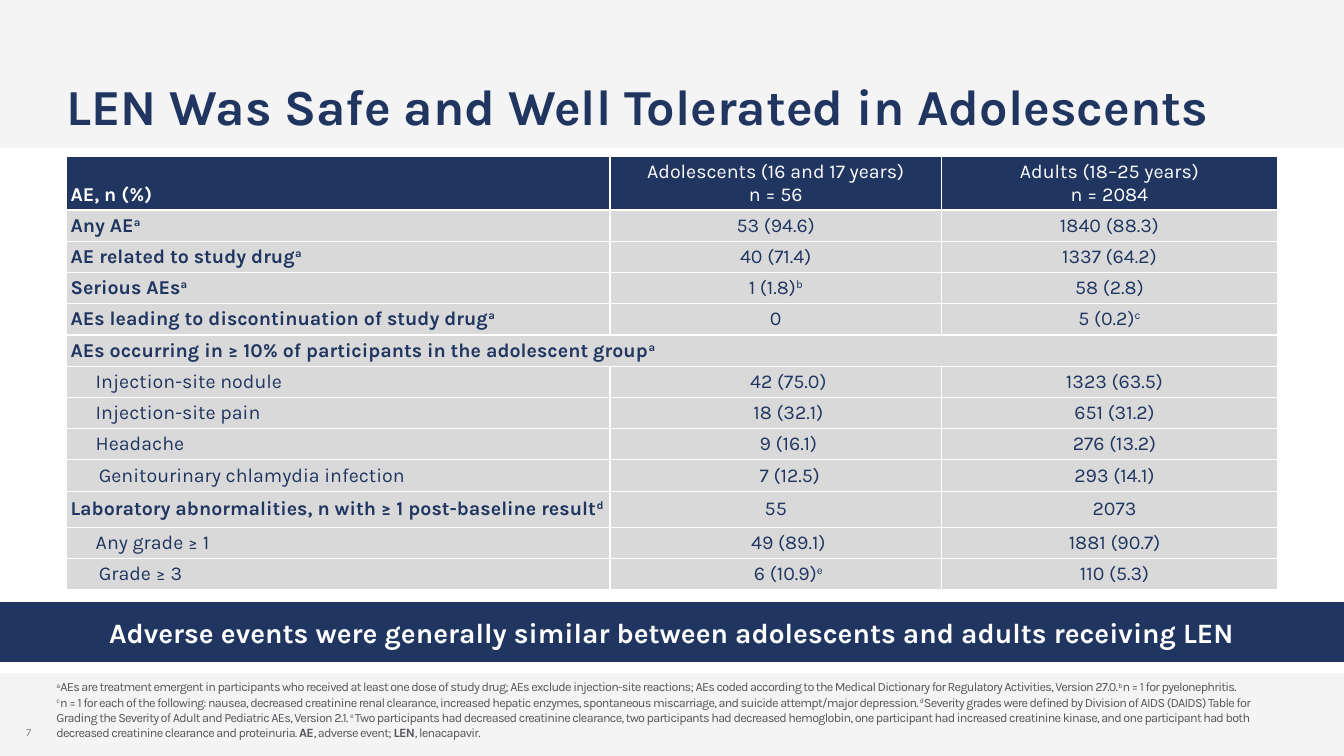
from pptx import Presentation
from pptx.dml.color import RGBColor
from pptx.enum.shapes import MSO_SHAPE
from pptx.enum.text import MSO_ANCHOR, MSO_AUTO_SIZE, PP_ALIGN
from pptx.util import Inches, Pt

RECT = MSO_SHAPE.RECTANGLE
MIDDLE, BOTTOM = MSO_ANCHOR.MIDDLE, MSO_ANCHOR.BOTTOM
LEFT, CENTER = PP_ALIGN.LEFT, PP_ALIGN.CENTER
FIXED = MSO_AUTO_SIZE.NONE
NAVY, PALE, GRAY, WHITE = "203661", "F4F4F4", "D9D9D9", "FFFFFF"


def color(code):
    return RGBColor.from_string(code)


def write(frame, text, size, ink, bold=False, align=LEFT, indent=0, track=0):
    for i, line in enumerate(text.split("\n")):
        par = frame.paragraphs[0] if i == 0 else frame.add_paragraph()
        par.alignment = align
        par.font.name = "Karla"
        par.font.size = Pt(size)
        par.font.color.rgb = color(ink)
        par.font.bold = bold
        if indent:
            par._p.get_or_add_pPr().set("marL", str(Inches(indent)))
        for j, part in enumerate(line.split("^")):
            for k, piece in enumerate(part.split("*")):
                if not piece:
                    continue
                run = par.add_run()
                run.text = piece
                run.font.bold = bold or k % 2 == 1
                props = run._r.get_or_add_rPr()
                if j % 2:
                    props.set("baseline", "30000")
                if track:
                    props.set("spc", str(track))


deck = Presentation()
deck.slide_width, deck.slide_height = Inches(13.33), Inches(7.5)
slide = deck.slides.add_slide(deck.slide_layouts[5])
shapes = slide.shapes

bars = []
for top, height, fill in [(6.68, 0.82, PALE), (0, 1.47, PALE), (5.99, 0.56, NAVY)]:
    bar = shapes.add_shape(RECT, 0, Inches(top), Inches(13.33), Inches(height))
    bar.shadow.inherit = False
    bar.fill.solid()
    bar.fill.fore_color.rgb = color(fill)
    bar.line.fill.background()
    bars.append(bar)

banner = bars[-1]
banner.line.color.rgb = color(NAVY)
banner.line.width = Pt(2)
banner.text_frame.vertical_anchor = MIDDLE
write(banner.text_frame, "Adverse events were generally similar between adolescents and adults receiving LEN",
      20, WHITE, True, CENTER)

title = shapes.title
shapes._spTree.append(title._element)
title.left, title.top = Inches(0.56), Inches(0.34)
title.width, title.height = Inches(12.11), Inches(1.06)
title.text_frame.auto_size = FIXED
title.text_frame.vertical_anchor = BOTTOM
write(title.text_frame, "LEN Was Safe and Well Tolerated in Adolescents", 36, NAVY, True)
title.text_frame.paragraphs[0].line_spacing = 0.9

rows = [
    ("AE, n (%)", "Adolescents (16 and 17 years)\nn = 56", "Adults (18–25 years)\nn = 2084", 0),
    ("Any AE^a", "53 (94.6)", "1840 (88.3)", 0),
    ("AE related to study drug^a", "40 (71.4)", "1337 (64.2)", 0),
    ("Serious AEs^a", "1 (1.8)^b", "58 (2.8)", 0),
    ("AEs leading to discontinuation of study drug^a", "0", "5 (0.2)^c", 0),
    ("AEs occurring in ≥ 10% of participants in the adolescent group^a", "", "", 0),
    ("Injection-site nodule", "42 (75.0)", "1323 (63.5)", 0.25),
    ("Injection-site pain", "18 (32.1)", "651 (31.2)", 0.25),
    ("Headache", "9 (16.1)", "276 (13.2)", 0.25),
    ("Genitourinary chlamydia infection", "7 (12.5)", "293 (14.1)", 0.28),
    ("Laboratory abnormalities, n with ≥ 1 post-baseline result^d", "55", "2073", 0),
    ("Any grade ≥ 1", "49 (89.1)", "1881 (90.7)", 0.25),
    ("Grade ≥ 3", "6 (10.9)^e", "110 (5.3)", 0.25),
]
GROUP, LAB, LAST = 5, 10, 12
tall = {0: 0.52, LAB: 0.36}
table = shapes.add_table(len(rows), 3, Inches(0.66), Inches(1.55), Inches(12.01), Inches(4.36)).table
table.horz_banding = False
for col, width in zip(table.columns, [5.39, 3.29, 3.33]):
    col.width = Inches(width)
table.cell(GROUP, 0).merge(table.cell(GROUP, 2))

for r, (*texts, indent) in enumerate(rows):
    table.rows[r].height = Inches(tall.get(r, 0.31))
    side, edge = (0.07, 0) if r == LAST else (0.04, 0.04)
    for c, text in enumerate(texts):
        cell = table.cell(r, c)
        cell.fill.solid()
        cell.fill.fore_color.rgb = color(GRAY if r else NAVY)
        cell.margin_left = cell.margin_right = Inches(side)
        cell.margin_top = cell.margin_bottom = Inches(edge)
        cell.vertical_anchor = BOTTOM if r == c == 0 else MIDDLE
        shift = indent if c < 2 else 0.1 if r > GROUP else 0
        write(cell.text_frame, text, 14, NAVY if r else WHITE,
              c == 0 and not indent, CENTER if c else LEFT, shift)

notes = [
    "^a^AEs are treatment emergent in participants who received at least one dose of study drug; "
    "AEs exclude injection-site reactions; AEs coded according to the Medical Dictionary for "
    "Regulatory Activities, Version 27.0. ^b^n = 1 for pyelonephritis.",
    "^c^n = 1 for each of the following: nausea, decreased creatinine renal clearance, increased "
    "hepatic enzymes, spontaneous miscarriage, and suicide attempt/major depression. "
    "^d^Severity grades were defined by Division of AIDS (DAIDS) Table for Grading the Severity of "
    "Adult and Pediatric AEs, Version 2.1. ^e ^Two participants had decreased creatinine clearance, "
    "two participants had decreased hemoglobin, one participant had increased creatinine kinase, "
    "and one participant had both decreased creatinine clearance and proteinuria. "
    "*AE*, adverse event; *LEN*, lenacapavir.",
]
for place, text, size, ink, align, inset, track in [
    ((0.09, 6.98, 0.39, 0.4), "7", 8, "8A8B8D", CENTER, 0.1, 0),
    ((0.56, 7.06, 12.2, 0.33), "\n".join(notes), 9, "54565B", LEFT, 0, -50),
]:
    frame = shapes.add_textbox(*map(Inches, place)).text_frame
    frame.word_wrap = True
    frame.vertical_anchor = BOTTOM
    frame.margin_left = frame.margin_right = Inches(inset)
    write(frame, text, size, ink, align=align, track=track)

deck.save("out.pptx")
